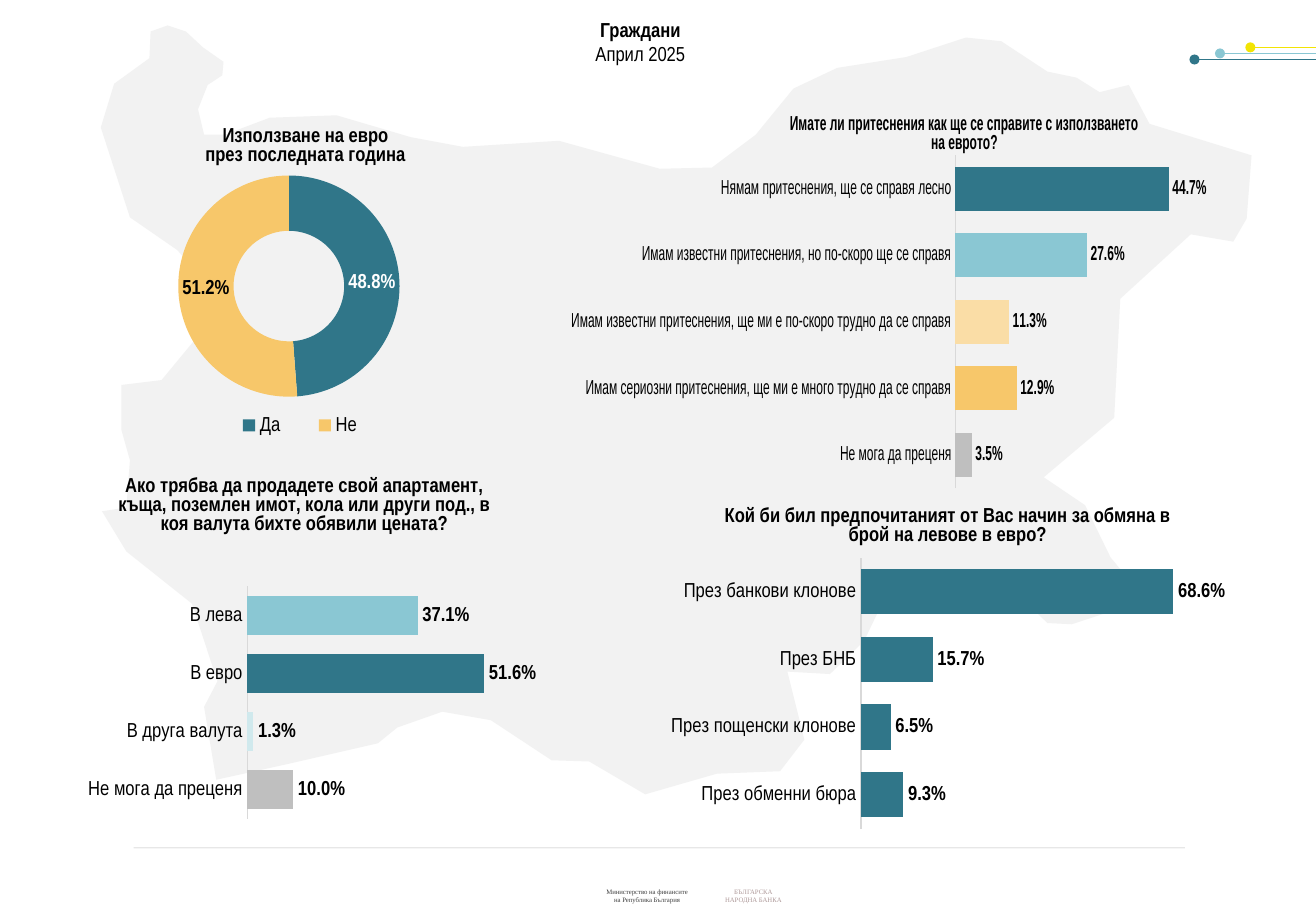
from pptx import Presentation
from pptx.chart.data import CategoryChartData
from pptx.dml.color import RGBColor
from pptx.enum.chart import XL_CHART_TYPE, XL_LABEL_POSITION, XL_LEGEND_POSITION, XL_TICK_MARK
from pptx.enum.shapes import MSO_CONNECTOR
from pptx.enum.text import MSO_ANCHOR, PP_ALIGN
from pptx.oxml import parse_xml
from pptx.oxml.ns import nsdecls, qn
from pptx.util import Inches, Pt

BAR, RING = XL_CHART_TYPE.BAR_CLUSTERED, XL_CHART_TYPE.DOUGHNUT
OUTER, BOTTOM = XL_LABEL_POSITION.OUTSIDE_END, XL_LEGEND_POSITION.BOTTOM
NO_TICK, STRAIGHT = XL_TICK_MARK.NONE, MSO_CONNECTOR.STRAIGHT
TOP, CENTER = MSO_ANCHOR.TOP, PP_ALIGN.CENTER

TEAL, AQUA, GOLD, GREY, BLACK = "307689", "8AC7D3", "F7C76A", "BFBFBF", "000000"
PERCENT = "0.0%"
BODY = {"name": "Arial Narrow", "size": Pt(12), "bold": False}
STRONG = {**BODY, "bold": True}
TINY = {"name": "Times New Roman", "size": Pt(4), "bold": False}

MAP = [
    (124, 26), (138, 21), (153, 26), (167, 39), (184, 51), (183, 62), (171, 70), (163, 90),
    (168, 111), (185, 111), (222, 97), (277, 95), (338, 113), (381, 121), (460, 116),
    (543, 139), (586, 138), (622, 111), (653, 73), (689, 56), (746, 47), (795, 31), (824, 34),
    (862, 59), (886, 64), (905, 76), (929, 70), (946, 102), (1030, 128), (1026, 180),
    (1015, 199), (980, 193), (922, 246), (917, 344), (859, 393), (893, 416), (914, 459),
    (943, 494), (882, 514), (862, 513), (827, 479), (723, 503), (711, 528), (683, 555),
    (648, 553), (662, 609), (642, 635), (590, 637), (531, 654), (485, 627), (454, 626),
    (404, 593), (364, 586), (327, 599), (311, 612), (237, 629), (178, 642), (168, 582),
    (179, 561), (158, 497), (104, 454), (84, 421), (104, 418), (107, 379), (100, 354),
    (100, 317), (133, 313), (171, 267), (173, 237), (146, 206), (107, 179), (83, 105),
    (94, 69), (123, 48),
]
LINES = [
    (9.83, 0.49, 10.83, TEAL, "headEnd"),
    (10.83, 0.39, 10.29, "F2E404", "tailEnd"),
    (10.04, 0.44, 10.83, AQUA, "headEnd"),
    (1.1, 6.98, 9.75, "A6A6A6", None),
]
BARS = [
    ((5.42, 4.02, 4.76, 2.86), (0.35, 0.2, 0.63, 0.78), 0.8,
     "Кой би бил предпочитаният от Вас начин за обмяна в брой на левове в евро?",
     [("През банкови клонове", 0.686, TEAL), ("През БНБ", 0.157, TEAL),
      ("През пощенски клонове", 0.065, TEAL), ("През обменни бюра", 0.093, TEAL)]),
    ((0.55, 3.76, 3.91, 3.14), (0.38, 0.34, 0.58, 0.61), 0.6,
     "Ако трябва да продадете свой апартамент, къща, поземлен имот, кола или други под., "
     "в коя валута бихте обявили цената?",
     [("В лева", 0.371, AQUA), ("В евро", 0.516, TEAL),
      ("В друга валута", 0.013, "D0E9ED"), ("Не мога да преценя", 0.1, GREY)]),
    ((4.7, 0.78, 5.23, 3.34), (0.48, 0.15, 0.52, 0.82), 0.5,
     "Имате ли притеснения как ще се справите с използването на еврото?",
     [("Нямам притеснения, ще се справя лесно", 0.447, TEAL),
      ("Имам известни притеснения, но по-скоро ще се справя", 0.276, AQUA),
      ("Имам известни притеснения, ще ми е по-скоро трудно да се справя", 0.113, "FADDA6"),
      ("Имам сериозни притеснения, ще ми е много трудно да се справя", 0.129, GOLD),
      ("Не мога да преценя", 0.035, GREY)]),
]


def rgb(code):
    """Turn a hex string into a colour."""
    return RGBColor.from_string(code)


def style(item, vals):
    """Set each named value on an item."""
    for key, val in vals.items():
        setattr(item, key, val)


def ink(font, vals, color=BLACK):
    """Format a font."""
    style(font, vals)
    font.color.rgb = rgb(color)


def paint(fill, color):
    """Fill with one solid colour."""
    fill.solid()
    fill.fore_color.rgb = rgb(color)


def write(box, lines):
    """Write centred lines of (text, format, colour) into a shape."""
    frame = box.text_frame
    frame.text = "\n".join(line[0] for line in lines)
    for para, (_, vals, color) in zip(frame.paragraphs, lines):
        para.alignment = CENTER
        ink(para.font, vals, color)


def draw_line(slide, x, y, end, color, tip):
    """Draw a thin level line with an optional dot at one end."""
    line = slide.shapes.add_connector(STRAIGHT, Inches(x), Inches(y), Inches(end), Inches(y))
    line.line.width = Pt(0.25)
    line.line.color.rgb = rgb(color)
    node = line.line._get_or_add_ln()
    if tip:
        node.append(parse_xml(f'<a:{tip} {nsdecls("a")} type="oval"/>'))
    else:
        node.find(".//" + qn("a:srgbClr")).append(
            parse_xml(f'<a:alpha {nsdecls("a")} val="74000"/>'))
    line._element.spPr.append(parse_xml(f'<a:effectLst {nsdecls("a")}/>'))


def draw_map(slide):
    """Draw the pale country outline."""
    pen = slide.shapes.build_freeform(*MAP[0], scale=Inches(0.01))
    pen.add_line_segments(MAP[1:], close=True)
    land = pen.convert_to_shape()
    land.shadow.inherit = False
    paint(land.fill, "F2F2F2")
    land.line.fill.background()


def place(node, index, area, inner=""):
    """Give a chart part a fixed area, as shares of the chart."""
    for old in node.findall(qn("c:layout")):
        node.remove(old)
    modes = '<c:xMode val="edge"/><c:yMode val="edge"/>'
    sizes = "".join(f'<c:{key} val="{val}"/>' for key, val in zip("xywh", area))
    node.insert(index, parse_xml(
        f'<c:layout {nsdecls("c")}><c:manualLayout>{inner}{modes}{sizes}'
        "</c:manualLayout></c:layout>"))


def add_chart(slide, kind, box, area, title, name, rows):
    """Add a titled one-series chart with coloured points and labels."""
    data = CategoryChartData(number_format=PERCENT)
    data.categories = [row[0] for row in rows]
    data.add_series(name, [row[1] for row in rows])
    chart = slide.shapes.add_chart(kind, *map(Inches, box), data).chart
    ink(chart.font, BODY)
    chart.has_legend = False
    chart.has_title = True
    chart.chart_title.text_frame.text = title
    for para in chart.chart_title.text_frame.paragraphs:
        ink(para.font, STRONG)
    series = chart.plots[0].series[0]
    labels = series.data_labels
    style(labels, {"show_value": True, "show_percentage": False,
                   "number_format": PERCENT, "number_format_is_linked": False})
    ink(labels.font, STRONG)
    for index, row in enumerate(rows):
        paint(series.points[index].format.fill, row[2])
    root = chart._chartSpace.find(qn("c:chart"))
    plot = root.find(qn("c:plotArea"))
    place(plot, 0, area, '<c:layoutTarget val="inner"/>')
    clear = f'<c:spPr {nsdecls("c", "a")}><a:noFill/><a:ln><a:noFill/></a:ln></c:spPr>'
    plot.append(parse_xml(clear))
    root.addnext(parse_xml(clear))
    return chart


def add_bars(slide, box, area, top, title, rows):
    """Add a bar chart that reads from the top down."""
    chart = add_chart(slide, BAR, box, area, title, title, rows)
    style(chart.plots[0], {"gap_width": 50, "vary_by_categories": False})
    chart.plots[0].series[0].data_labels.position = OUTER
    axis = chart.category_axis
    style(axis, {"major_tick_mark": NO_TICK, "minor_tick_mark": NO_TICK,
                 "reverse_order": True, "has_major_gridlines": False})
    ink(axis.tick_labels.font, BODY)
    axis.format.line.width = Pt(0.75)
    axis.format.line.color.rgb = rgb("D9D9D9")
    style(chart.value_axis, {"minimum_scale": 0, "maximum_scale": top,
                             "has_major_gridlines": False, "visible": False})


def add_ring(slide):
    """Add the doughnut chart with its legend."""
    title = "Използване на евро\nпрез последната година"
    chart = add_chart(slide, RING, (0.23, 0.88, 4.57, 3.14), (0.27, 0.18, 0.4, 0.58),
                      title, "Дял", [("Да", 0.488, TEAL), ("Не", 0.512, GOLD)])
    ink(chart.plots[0].series[0].points[0].data_label.font, STRONG, "FFFFFF")
    chart.has_legend = True
    style(chart.legend, {"position": BOTTOM, "include_in_layout": False})
    ink(chart.legend.font, BODY)
    place(chart.legend._element, 1, (0.33, 0.79, 0.32, 0.09))


def main():
    """Build the slide and save it."""
    deck = Presentation()
    style(deck, {"slide_width": Inches(10.83), "slide_height": Inches(7.5)})
    slide = deck.slides.add_slide(deck.slide_layouts[5])
    head = slide.shapes.title
    style(head, {"left": Inches(4.79), "top": Inches(0.09),
                 "width": Inches(0.96), "height": Inches(0.5)})
    write(head, [("Граждани", STRONG, BLACK), ("Април 2025", BODY, BLACK)])
    style(head.text_frame, {"word_wrap": False, "vertical_anchor": TOP})
    for line in LINES:
        draw_line(slide, *line)
    draw_map(slide)
    for x, width, text, color in [
        (4.87, 0.91, "Министерство на финансите на Република България", "404040"),
        (5.85, 0.7, "БЪЛГАРСКА НАРОДНА БАНКА", "AF9A9A"),
    ]:
        box = slide.shapes.add_textbox(Inches(x), Inches(7.26), Inches(width), Inches(0.24))
        box.text_frame.word_wrap = True
        write(box, [(text, TINY, color)])
    add_ring(slide)
    for bars in BARS:
        add_bars(slide, *bars)
    deck.save("out.pptx")


if __name__ == "__main__":
    main()
